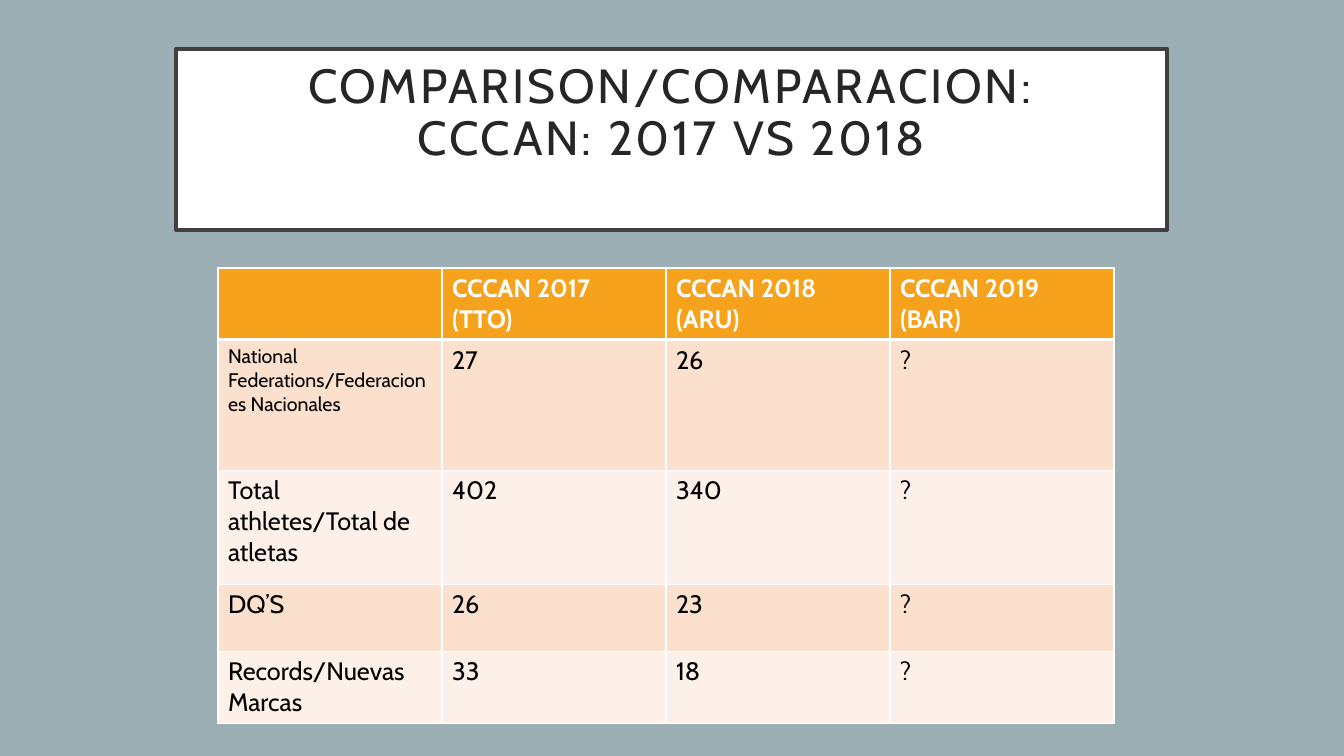
from lxml.etree import SubElement
from pptx import Presentation
from pptx.dml.color import RGBColor
from pptx.enum.shapes import MSO_SHAPE
from pptx.enum.text import MSO_ANCHOR, PP_ALIGN
from pptx.oxml.ns import qn
from pptx.util import Pt

TITLE = "COMPARISON/COMPARACION:\vCCCAN: 2017 VS 2018"
ROWS = [
    ["", "CCCAN 2017\n(TTO)", "CCCAN 2018 (ARU)", "CCCAN 2019\n(BAR)"],
    ["National Federations/Federaciones Nacionales", "27", "26", "?"],
    ["Total athletes/Total de atletas", "402", "340", "?"],
    ["DQ’S", "26", "23", "?"],
    ["Records/Nuevas Marcas", "33", "18", "?"],
]
ROW_HEIGHTS = [71, 131, 114, 67, 71]
COL_WIDTH = 224
TABLE_LEFT, TABLE_TOP = 218, 268
TITLE_BOX = (176, 49, 991, 181)
TITLE_INSETS = {"margin_left": 30, "margin_right": 30, "margin_top": 13, "margin_bottom": 0}
COLORS = {
    "background": "9BAFB5", "white": "FFFFFF", "frame": "404040", "title": "262626",
    "header": "F6A21D", "odd": "FBE0CD", "even": "FDF0E8", "black": "000000",
}
FONTS = {
    "title": {"name": "Cabin", "size": Pt(34.2), "bold": False},
    "header": {"name": "Cabin", "size": Pt(18), "bold": True},
    "body": {"name": "Cabin", "size": Pt(18), "bold": False},
    "small": {"name": "Cabin", "size": Pt(14), "bold": False},
}


def px(n):
    return round(n * 914400 / 100.8)


def rgb(name):
    return RGBColor.from_string(COLORS[name])


def paint(fill, color):
    fill.solid()
    fill.fore_color.rgb = rgb(color)


def style(tf, font, color):
    for p in tf.paragraphs:
        for r in p.runs:
            for key, value in FONTS[font].items():
                setattr(r.font, key, value)
            r.font.color.rgb = rgb(color)


def add_borders(cell, widths):
    tcPr = cell._tc.get_or_add_tcPr()
    for side, width in widths.items():
        ln = SubElement(tcPr, qn(f"a:ln{side}"), w=str(Pt(width)))
        fill = SubElement(ln, qn("a:solidFill"))
        SubElement(fill, qn("a:srgbClr"), val=COLORS["white"])


def add_title(s):
    sp = s.shapes.add_shape(MSO_SHAPE.RECTANGLE, *map(px, TITLE_BOX))
    sp.shadow.inherit = False
    paint(sp.fill, "white")
    sp.line.color.rgb = rgb("frame")
    sp.line.width = Pt(3)
    tf = sp.text_frame
    tf.word_wrap = True
    tf.vertical_anchor = MSO_ANCHOR.TOP
    for key, value in TITLE_INSETS.items():
        setattr(tf, key, px(value))
    p = tf.paragraphs[0]
    p.text = TITLE
    p.alignment = PP_ALIGN.CENTER
    p.line_spacing = 0.9
    style(tf, "title", "title")
    for r in p.runs:
        r.font._element.set("spc", "200")


def add_comparison(s):
    n_cols = len(ROWS[0])
    size = (COL_WIDTH * n_cols, sum(ROW_HEIGHTS))
    table = s.shapes.add_table(
        len(ROWS), n_cols, *map(px, (TABLE_LEFT, TABLE_TOP, *size))).table
    for col in table.columns:
        col.width = px(COL_WIDTH)
    for i, (texts, height) in enumerate(zip(ROWS, ROW_HEIGHTS)):
        table.rows[i].height = px(height)
        for j, text in enumerate(texts):
            cell = table.cell(i, j)
            cell.text = text
            add_borders(cell, {"L": 1, "R": 1, "T": 3 if i == 1 else 1, "B": 3 if i == 0 else 1})
            if i == 0:
                paint(cell.fill, "header")
                style(cell.text_frame, "header", "white")
            else:
                paint(cell.fill, "odd" if i % 2 else "even")
                style(cell.text_frame, "small" if (i, j) == (1, 0) else "body", "black")


def main():
    prs = Presentation()
    prs.slide_width, prs.slide_height = px(1344), px(756)
    s = prs.slides.add_slide(prs.slide_layouts[6])
    paint(s.background.fill, "background")
    add_title(s)
    add_comparison(s)
    prs.save("out.pptx")


if __name__ == "__main__":
    main()
